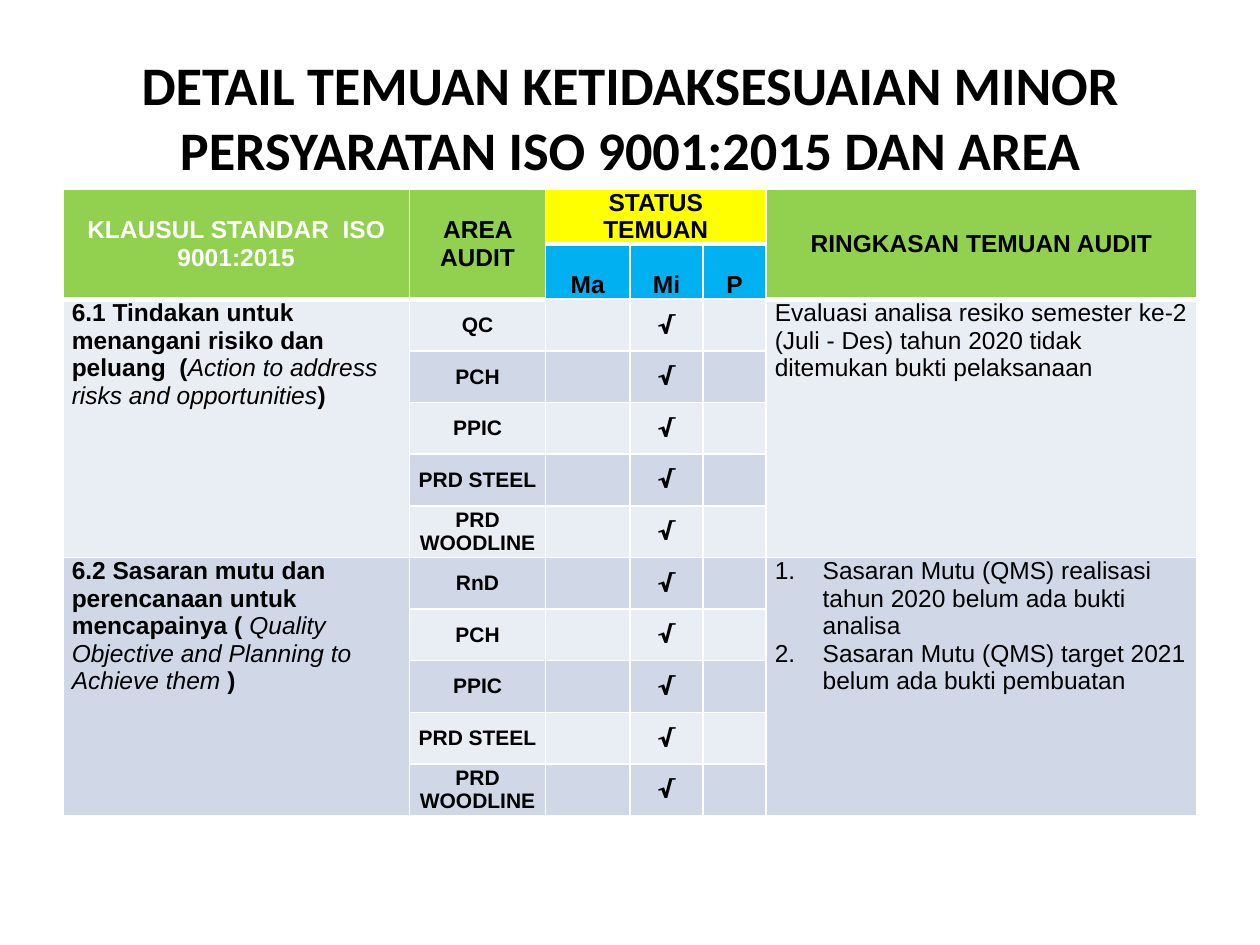
"""Build the slide of minor audit findings for ISO 9001:2015."""
from dataclasses import dataclass

from lxml.etree import SubElement
from pptx import Presentation
from pptx.dml.color import RGBColor
from pptx.enum.text import MSO_ANCHOR as Anchor, PP_ALIGN as Align
from pptx.oxml import parse_xml
from pptx.oxml.ns import nsdecls, qn
from pptx.util import Inches, Pt

GREEN, YELLOW, BLUE, WHITE = "92D050", "FFFF00", "00B0F0", "FFFFFF"
BANDS = ("E9EDF4", "D0D8E8")
WIDTHS = (2.75, 1.08, 0.67, 0.58, 0.5, 3.42)
ROW = 0.41
HEAD = 2
AREAS = ("QC", "PCH", "PPIC", "PRD STEEL", "PRD WOODLINE")


@dataclass
class Clause:
    """One clause of the standard with its areas and findings."""
    title: str
    gloss: str
    close: str
    areas: tuple[str, ...]
    notes: tuple[str, ...]


@dataclass
class Header:
    """One heading cell with its place and look."""
    text: str
    row: int
    col: int
    last: tuple[int, int]
    fill: str
    anchor: Anchor
    color: str = "000000"


CLAUSES = (
    Clause("6.1 Tindakan untuk menangani risiko dan peluang  (",
           "Action to address risks and opportunities", ")", AREAS,
           ("Evaluasi analisa resiko semester ke-2 (Juli - Des) tahun 2020 "
            "tidak ditemukan bukti pelaksanaan",)),
    Clause("6.2 Sasaran mutu dan perencanaan untuk mencapainya ( ",
           "Quality Objective and Planning to Achieve them", " )",
           ("RnD",) + AREAS[1:],
           ("Sasaran Mutu (QMS) realisasi tahun 2020 belum ada bukti analisa",
            "Sasaran Mutu (QMS) target 2021 belum ada bukti pembuatan")),
)

HEADERS = (
    Header("KLAUSUL STANDAR  ISO 9001:2015", 0, 0, (1, 0), GREEN, Anchor.MIDDLE, WHITE),
    Header("AREA AUDIT", 0, 1, (1, 1), GREEN, Anchor.MIDDLE),
    Header("STATUS TEMUAN", 0, 2, (0, 4), YELLOW, Anchor.BOTTOM),
    Header("RINGKASAN TEMUAN AUDIT", 0, 5, (1, 5), GREEN, Anchor.MIDDLE),
    Header("Ma", 1, 2, (1, 2), BLUE, Anchor.BOTTOM),
    Header("Mi", 1, 3, (1, 3), BLUE, Anchor.BOTTOM),
    Header("P", 1, 4, (1, 4), BLUE, Anchor.BOTTOM),
)


def paint(target, color: str) -> None:
    """Give a fill a solid colour."""
    target.solid()
    target.fore_color.rgb = RGBColor.from_string(color)


def write(para, text: str, *, size: float = 14, font: str = "Arial", color: str = "000000",
          bold: bool = True, italic: bool = False, align: Align = Align.LEFT) -> None:
    """Add one formatted run to a paragraph."""
    para.alignment = align
    run = para.add_run()
    run.text = text
    face = run.font
    face.size, face.name, face.bold, face.italic = Pt(size), font, bold, italic
    paint(face.fill, color)


def number(para) -> None:
    """Number a paragraph with a hanging indent."""
    props = para._p.get_or_add_pPr()
    props.set("marL", str(Inches(0.38)))
    props.set("indent", str(-Inches(0.38)))
    SubElement(props, qn("a:buAutoNum"), type="arabicPeriod")


def thick(row: int, col: int) -> int:
    """Return the width of the line below a cell."""
    return 3 if row == 0 or (row == 1 and col in (0, 1, 5)) else 1


def edge(cell, row: int, col: int) -> None:
    """Draw the white borders of a cell."""
    props = cell._tc.get_or_add_tcPr()
    sides = {"L": 1, "R": 1, "T": thick(row - 1, col) if row else 1, "B": thick(row, col)}
    for spot, (side, width) in enumerate(sides.items()):
        props.insert(spot, parse_xml(
            f'<a:ln{side} {nsdecls("a")} w="{Pt(width)}"><a:solidFill>'
            f'<a:srgbClr val="{WHITE}"/></a:solidFill></a:ln{side}>'))


def style(table) -> None:
    """Set the insets, band fills and borders of all cells."""
    for row in range(len(table.rows)):
        for col in range(len(WIDTHS)):
            cell = table.cell(row, col)
            cell.margin_left = cell.margin_right = Inches(0.07)
            cell.margin_top = cell.margin_bottom = 0
            paint(cell.fill, BANDS[row % 2])
            edge(cell, row, col)


def add_head(table, head: Header) -> None:
    """Fill one heading cell, merged if it spans."""
    cell = table.cell(head.row, head.col)
    if head.last != (head.row, head.col):
        cell.merge(table.cell(*head.last))
    paint(cell.fill, head.fill)
    cell.vertical_anchor = head.anchor
    write(cell.text_frame.paragraphs[0], head.text, color=head.color, align=Align.CENTER)


def add_clause(table, top: int, clause: Clause) -> None:
    """Fill the rows of one clause."""
    end = top + len(clause.areas) - 1
    name, note = table.cell(top, 0), table.cell(top, 5)
    for cell, col in ((name, 0), (note, 5)):
        cell.merge(table.cell(end, col))
        paint(cell.fill, BANDS[(top - HEAD) // len(AREAS)])
    para = name.text_frame.paragraphs[0]
    write(para, clause.title)
    write(para, clause.gloss, bold=False, italic=True)
    write(para, clause.close)
    frame = note.text_frame
    for spot, text in enumerate(clause.notes):
        para = frame.add_paragraph() if spot else frame.paragraphs[0]
        write(para, text, bold=False)
        if len(clause.notes) > 1:
            number(para)
    for row, area in enumerate(clause.areas, top):
        for col, text, size, font in ((1, area, 12, "Arial"), (3, "√", 14, "Cambria")):
            cell = table.cell(row, col)
            cell.vertical_anchor = Anchor.MIDDLE
            write(cell.text_frame.paragraphs[0], text, size=size, font=font, align=Align.CENTER)


def main() -> None:
    """Build and save the slide."""
    deck = Presentation()
    deck.slide_width, deck.slide_height = Inches(10), Inches(7.5)
    slide = deck.slides.add_slide(deck.slide_layouts[5])
    title = slide.shapes.title
    title.left, title.top, title.width, title.height = map(Inches, (0.5, 0.3, 9, 1.25))
    title.text_frame.vertical_anchor = Anchor.MIDDLE
    write(title.text_frame.paragraphs[0],
          "DETAIL TEMUAN KETIDAKSESUAIAN MINOR PERSYARATAN ISO 9001:2015 DAN AREA",
          size=31, font="Calibri", align=Align.CENTER)
    count = HEAD + sum(len(clause.areas) for clause in CLAUSES)
    table = slide.shapes.add_table(count, len(WIDTHS), Inches(0.5), Inches(1.5),
                                   Inches(9), Inches(ROW * count)).table
    table.first_row = table.horz_banding = False
    for column, width in zip(table.columns, WIDTHS):
        column.width = Inches(width)
    for row in table.rows:
        row.height = Inches(ROW)
    style(table)
    for head in HEADERS:
        add_head(table, head)
    top = HEAD
    for clause in CLAUSES:
        add_clause(table, top, clause)
        top += len(clause.areas)
    deck.save("out.pptx")


if __name__ == "__main__":
    main()
